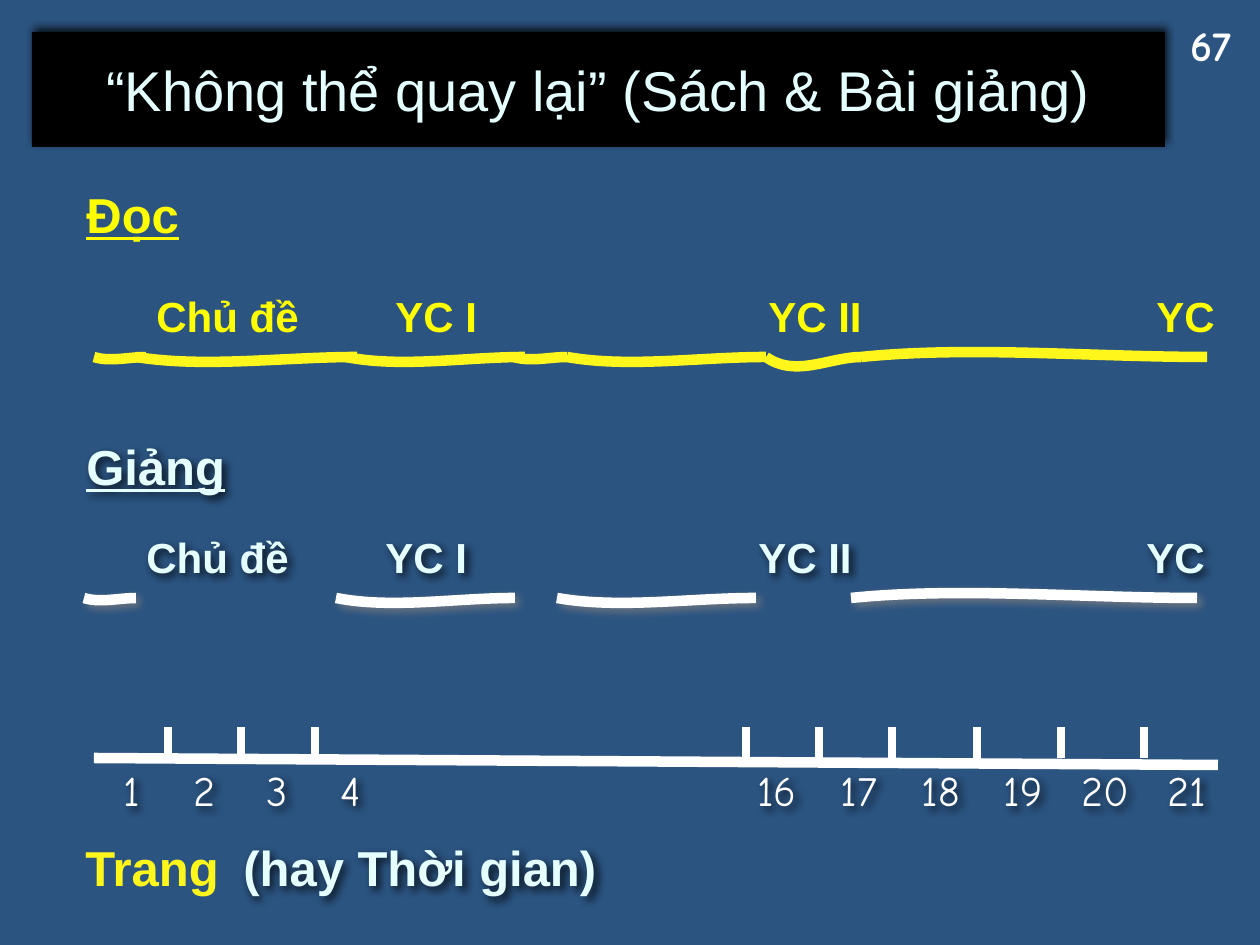
from dataclasses import dataclass

from lxml import etree
from pptx import Presentation
from pptx.dml.color import RGBColor
from pptx.enum.shapes import MSO_CONNECTOR, MSO_SHAPE
from pptx.enum.text import MSO_ANCHOR, MSO_AUTO_SIZE, PP_ALIGN
from pptx.oxml.ns import qn
from pptx.util import Emu, Pt

RECTANGLE = MSO_SHAPE.RECTANGLE
STRAIGHT = MSO_CONNECTOR.STRAIGHT
MIDDLE = MSO_ANCHOR.MIDDLE
GROW = MSO_AUTO_SIZE.SHAPE_TO_FIT_TEXT
LEFT, CENTER = PP_ALIGN.LEFT, PP_ALIGN.CENTER

PX_PER_INCH = 126
EMU_PER_PX = 914400 / PX_PER_INCH


@dataclass(frozen=True)
class Theme:
    background: str = "2B5481"
    banner: str = "000000"
    pale: str = "E5FFFF"
    yellow: str = "FFFF00"
    gold: str = "FFF61C"
    white: str = "FFFFFF"
    black: str = "000000"
    gray: str = "808080"
    body_font: str = "Arial"
    number_font: str = "Comic Neue"
    title_size: int = 32
    heading_size: int = 28
    label_size: int = 24
    curve_width: float = 6
    tick_width: float = 4.5


THEME = Theme()

HEADINGS = [
    ("Đọc", (74, 178, 118, 72), THEME.yellow, True),
    ("Giảng", (74, 430, 166, 72), THEME.pale, True),
    ("Trang", (73, 831, 160, 72), THEME.gold, False),
    ("(hay Thời gian)", (231, 831, 383, 72), THEME.pale, False),
]
TOPICS = [("Chủ đề", 144, 169), ("YC I", 383, 108), ("YC II", 756, 120), ("YC", 1144, 84)]
SPOKEN_PARTS = [(94, 146, 5), (346, 525, 11), (567, 766, 11), (861, 1207, -11)]
READ_ONLY_PARTS = [(136, 357, 11), (514, 567, 5), (766, 861, 21)]
READING_Y, LECTURE_Y = 357, 598
LECTURE_SHIFT = -10
TICKS = [168, 241, 315, 746, 819, 892, 977, 1061, 1144]
AXIS_Y, TICK_TOP = 758, 727


def px(length):
    return Emu(round(length * EMU_PER_PX))


def rgb(color):
    return RGBColor.from_string(color)


def add_shadow(shape, color, angle=45):
    shape.shadow.inherit = False
    effects = shape._element.spPr.find(qn("a:effectLst"))
    shadow = etree.SubElement(
        effects, qn("a:outerShdw"), blurRad=str(Pt(5)), dist=str(Pt(2.8)),
        dir=str(angle * 60000), algn="ctr", rotWithShape="0")
    tint = etree.SubElement(shadow, qn("a:srgbClr"), val=color)
    etree.SubElement(tint, qn("a:alpha"), val="75000")


def write(frame, words, color, align=LEFT, **formats):
    paragraph = frame.paragraphs[0]
    paragraph.alignment = align
    run = paragraph.add_run()
    run.text = words
    for name, value in formats.items():
        setattr(run.font, name, value)
    run.font.color.rgb = rgb(color)


def add_label(shapes, words, bounds, color, wrap=False, shadowed=False, **formats):
    label = shapes.add_textbox(*map(px, bounds))
    label.text_frame.word_wrap = wrap
    label.text_frame.auto_size = GROW
    write(label.text_frame, words, color, **formats)
    if shadowed:
        add_shadow(label, THEME.black)


def add_title(shapes):
    banner = shapes.add_shape(RECTANGLE, *map(px, (32, 32, 1133, 115)))
    banner.fill.solid()
    banner.fill.fore_color.rgb = rgb(THEME.banner)
    banner.line.fill.background()
    add_shadow(banner, THEME.black, 283)
    banner.text_frame.word_wrap = True
    banner.text_frame.vertical_anchor = MIDDLE
    write(banner.text_frame, "“Không thể quay lại” (Sách & Bài giảng)", THEME.pale,
          CENTER, size=Pt(THEME.title_size), name=THEME.body_font)


def add_curve(shapes, start, end, baseline, dip, color, shadowed):
    width = end - start
    controls = [(start + 0.31 * width, baseline + dip),
                (start + 0.67 * width, baseline), (end, baseline)]
    builder = shapes.build_freeform(px(start), px(baseline))
    builder.add_line_segments([(px(x), px(y)) for x, y in controls], close=False)
    curve = builder.convert_to_shape()
    segments = list(curve._element.iter(qn("a:lnTo")))
    bezier = etree.SubElement(segments[0].getparent(), qn("a:cubicBezTo"))
    for segment in segments:
        bezier.append(segment[0])
        segment.getparent().remove(segment)
    curve.fill.background()
    curve.line.color.rgb = rgb(color)
    curve.line.width = Pt(THEME.curve_width)
    curve.shadow.inherit = False
    if shadowed:
        add_shadow(curve, THEME.gray)


def add_track(shapes, baseline, parts, curve_color, label_color, shift=0, shadowed=False):
    for start, end, dip in parts:
        add_curve(shapes, start + shift, end + shift, baseline, dip, curve_color, shadowed)
    for topic, left, width in TOPICS:
        add_label(shapes, topic, (left + shift, baseline - 73, width, 64), label_color,
                  shadowed=shadowed, size=Pt(THEME.label_size),
                  name=THEME.body_font, bold=True)


def add_line(shapes, start, end, width):
    line = shapes.add_connector(STRAIGHT, *map(px, start + end))
    line.line.color.rgb = rgb(THEME.white)
    line.line.width = Pt(width)
    etree.SubElement(line._element.spPr, qn("a:effectLst"))


def add_page_axis(shapes):
    axis = shapes.add_group_shape().shapes
    add_line(axis, (94, AXIS_Y), (1218, AXIS_Y + 7), THEME.curve_width)
    for x in TICKS:
        add_line(axis, (x, TICK_TOP), (x, AXIS_Y), THEME.tick_width)
    for pages, left, step, width in [(range(1, 5), 105, 73, 53), (range(16, 22), 735, 82, 84)]:
        for index, page in enumerate(pages):
            add_label(axis, str(page), (left + index * step, AXIS_Y, width, 63),
                      THEME.white, wrap=True, shadowed=True, align=CENTER,
                      size=Pt(THEME.label_size), name=THEME.number_font)


def main():
    deck = Presentation()
    deck.slide_width, deck.slide_height = px(1260), px(945)
    slide = deck.slides.add_slide(deck.slide_layouts[6])
    slide.background.fill.solid()
    slide.background.fill.fore_color.rgb = rgb(THEME.background)
    shapes = slide.shapes

    add_title(shapes)
    add_label(shapes, "67", (1173, 13, 76, 63), THEME.white, align=CENTER,
              size=Pt(THEME.label_size), name=THEME.number_font, bold=True)
    add_page_axis(shapes)
    for heading, bounds, color, underlined in HEADINGS:
        add_label(shapes, heading, bounds, color, shadowed=color == THEME.pale,
                  size=Pt(THEME.heading_size), name=THEME.body_font,
                  bold=True, underline=underlined)
    add_track(shapes, READING_Y, SPOKEN_PARTS + READ_ONLY_PARTS, THEME.gold, THEME.yellow)
    add_track(shapes, LECTURE_Y, SPOKEN_PARTS, THEME.white, THEME.pale,
              shift=LECTURE_SHIFT, shadowed=True)
    deck.save("out.pptx")


if __name__ == "__main__":
    main()
